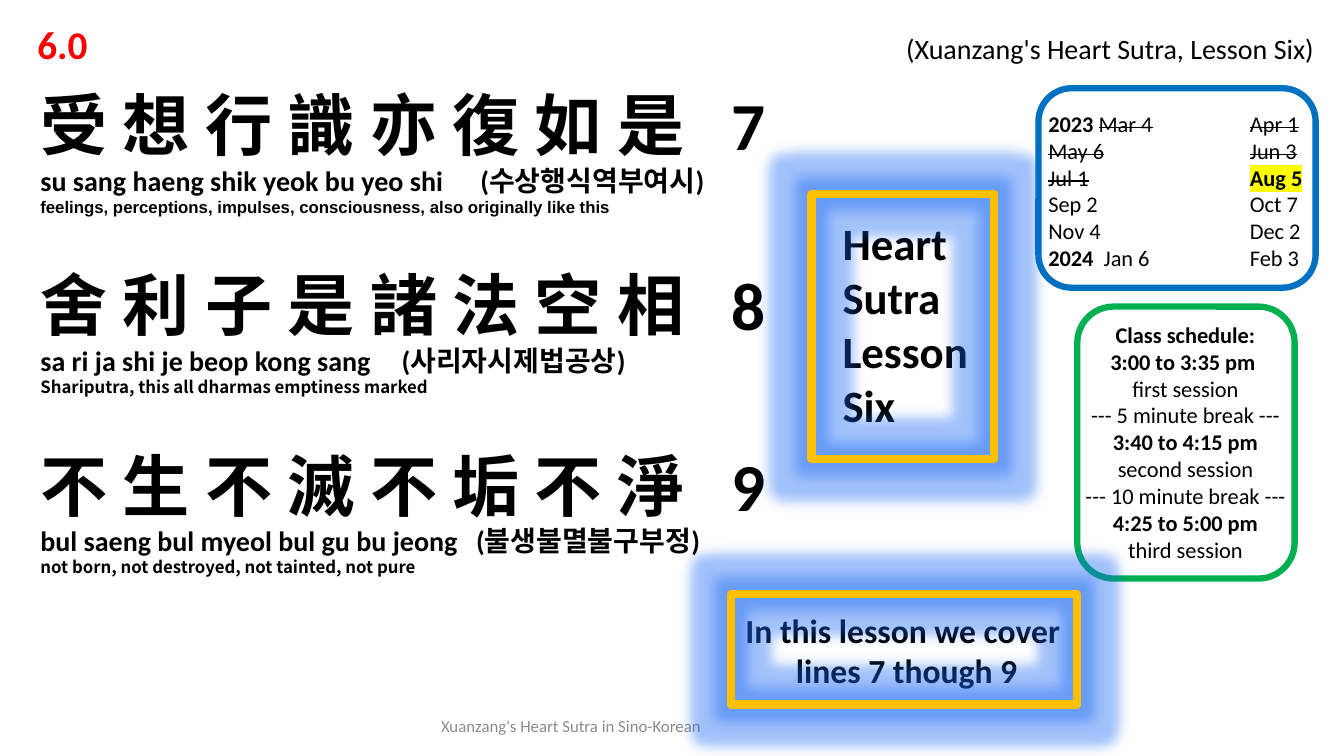
from lxml import etree
from pptx import Presentation
from pptx.dml.color import RGBColor
from pptx.enum.shapes import MSO_SHAPE
from pptx.enum.text import MSO_ANCHOR, MSO_AUTO_SIZE, PP_ALIGN
from pptx.oxml.ns import qn
from pptx.util import Pt

RECTANGLE = MSO_SHAPE.RECTANGLE
ROUNDED = MSO_SHAPE.ROUNDED_RECTANGLE
TOP, MIDDLE = MSO_ANCHOR.TOP, MSO_ANCHOR.MIDDLE
LEFT, CENTER = PP_ALIGN.LEFT, PP_ALIGN.CENTER
NO_AUTOFIT = MSO_AUTO_SIZE.NONE
TITLE_ONLY = 5
EMU_PER_PX = 9525
COLORS = {
    "black": "000000", "red": "FF0000", "gray": "8C8C8C", "blue": "0070C0",
    "green": "00B050", "gold": "FFC000", "yellow": "FFFF00", "glow": "1465F4",
}
LATIN, CJK, SANS = "Calibri", "Noto Sans CJK KR", "Arial"
BOLD = {"bold": True}

VERSES = [
    ("受 想 行 識 亦 復 如 是", "7", "su sang haeng shik yeok bu yeo shi", "(수상행식역부여시)", 419,
     "feelings, perceptions, impulses, consciousness, also originally like this", SANS),
    ("舍 利 子 是 諸 法 空 相", "8", "sa ri ja shi je beop kong sang", "(사리자시제법공상)", 344,
     "Shariputra, this all dharmas emptiness marked", CJK),
    ("不 生 不 滅 不 垢 不 淨", "9", "bul saeng bul myeol bul gu bu jeong", "(불생불멸불구부정)", 415,
     "not born, not destroyed, not tainted, not pure", CJK),
]
STRUCK = {"strike": True}
DATES = [
    [("2023 ", BOLD), ("Mar 4", STRUCK), ("\t", {}), ("Apr 1", STRUCK)],
    [("May 6", STRUCK), ("\t", {}), ("Jun 3", STRUCK)],
    [("Jul 1", STRUCK), ("\t", {}), ("Aug 5", {"bold": True, "highlight": "yellow"})],
    [("Sep 2\tOct 7", {})],
    [("Nov 4\tDec 2", {})],
    [("2024", BOLD), ("  Jan 6\tFeb 3", {})],
]
SESSIONS = [
    ("Class schedule:", BOLD),
    ("3:00 to 3:35 pm ", BOLD),
    ("first session", {}),
    ("--- 5 minute break ---", {}),
    ("3:40 to 4:15 pm", BOLD),
    ("second session", {}),
    ("--- 10 minute break ---", {}),
    ("4:25 to 5:00 pm", BOLD),
    ("third session", {}),
]


class SlideBuilder:
    def __init__(self, presentation):
        self.slide = presentation.slides.add_slide(presentation.slide_layouts[TITLE_ONLY])

    def place(self, shape, box):
        for name, value in zip(("left", "top", "width", "height"), box):
            setattr(shape, name, value * EMU_PER_PX)

    def title(self, box, paragraphs):
        shape = self.slide.shapes.title
        self.place(shape, box)
        self.fill_text(shape.text_frame, paragraphs, TOP)

    def text(self, box, paragraphs, anchor=TOP):
        shape = self.slide.shapes.add_textbox(*(value * EMU_PER_PX for value in box))
        self.fill_text(shape.text_frame, paragraphs, anchor)

    def fill_text(self, frame, paragraphs, anchor):
        frame.word_wrap = True
        frame.auto_size = NO_AUTOFIT
        frame.vertical_anchor = anchor
        for index, (runs, layout, tab) in enumerate(paragraphs):
            paragraph = frame.add_paragraph() if index else frame.paragraphs[0]
            for name, value in layout.items():
                setattr(paragraph, name, value)
            if tab:
                self.tab_stop(paragraph, *tab)
            for text, style in runs:
                self.run(paragraph, text, style)

    def tab_stop(self, paragraph, position, alignment):
        properties = paragraph._p.get_or_add_pPr()
        stops = etree.SubElement(properties, qn("a:tabLst"))
        etree.SubElement(stops, qn("a:tab"), pos=str(position * EMU_PER_PX), algn=alignment)

    def run(self, paragraph, text, style):
        run = paragraph.add_run()
        run.text = text
        font_values = {
            "name": style.get("font", LATIN),
            "size": Pt(style.get("size", 16)),
            "bold": style.get("bold", False),
        }
        for name, value in font_values.items():
            setattr(run.font, name, value)
        run.font.color.rgb = RGBColor.from_string(COLORS[style.get("color", "black")])
        properties = run.font._element
        latin = properties.find(qn("a:latin"))
        latin.addnext(etree.Element(qn("a:ea"), typeface=CJK))
        if style.get("strike"):
            properties.set("strike", "sngStrike")
        if "highlight" in style:
            highlight = etree.Element(qn("a:highlight"))
            etree.SubElement(highlight, qn("a:srgbClr"), val=COLORS[style["highlight"]])
            latin.addprevious(highlight)

    def frame(self, kind, box, color, width, glow=None):
        shape = self.slide.shapes.add_shape(kind, *(value * EMU_PER_PX for value in box))
        shape.shadow.inherit = False
        shape.fill.background()
        shape.line.color.rgb = RGBColor.from_string(COLORS[color])
        shape.line.width = Pt(width)
        if glow:
            effects = shape._element.spPr.find(qn("a:effectLst"))
            halo = etree.SubElement(effects, qn("a:glow"), rad=str(Pt(glow)))
            tint = etree.SubElement(halo, qn("a:srgbClr"), val=COLORS["glow"])
            etree.SubElement(tint, qn("a:alpha"), val="40000")


def verse_paragraphs():
    paragraphs = []
    for index, (hanzi, number, reading, hangul, hangul_tab, meaning, font) in enumerate(VERSES):
        lines = [
            (f"{hanzi}\t{number}", 48, 65, LATIN, (658, "l")),
            (f"{reading}\t{hangul}", 20, 23.4, LATIN, (hangul_tab, "l")),
            (meaning, 12, 14.3, font, None),
        ]
        for text, size, height, name, tab in lines:
            layout = {"line_spacing": Pt(height)}
            if index and size == 48:
                layout["space_before"] = Pt(26)
            paragraphs.append(([(text, {"size": size, "font": name, "bold": True})], layout, tab))
    return paragraphs


def centered(lines):
    return [([line], {"alignment": CENTER}, None) for line in lines]


def main():
    presentation = Presentation()
    presentation.slide_width = 1280 * EMU_PER_PX
    presentation.slide_height = 720 * EMU_PER_PX
    builder = SlideBuilder(presentation)

    heading = [
        ("6.0", {"size": 28, "bold": True, "color": "red"}),
        ("\t(Xuanzang's Heart Sutra, Lesson Six)", {"size": 20}),
    ]
    builder.title((26, 11, 1260, 56), [(heading, {"alignment": LEFT, "line_spacing": 1.07}, (1216, "r"))])
    builder.text((29, 65, 944, 552), verse_paragraphs())
    footer = ("Xuanzang's Heart Sutra in Sino-Korean", {"size": 12, "color": "gray"})
    builder.text((328, 672, 432, 38), centered([footer]), MIDDLE)

    builder.text((989, 100, 262, 164), [(runs, {}, (192, "l")) for runs in DATES])
    builder.frame(ROUNDED, (989, 84, 264, 190), "blue", 4.5)
    builder.text((1004, 301, 250, 242), centered(SESSIONS))
    builder.frame(ROUNDED, (1026, 292, 207, 259), "green", 4.5)

    lesson_style = {"size": 32, "bold": True}
    lesson = [([(word, lesson_style)], {}, None) for word in ("Heart", "Sutra", "Lesson", "Six")]
    builder.text((793, 201, 154, 217), lesson)
    builder.frame(RECTANGLE, (773, 185, 174, 252), "gold", 6, glow=18)
    cover_style = {"size": 24, "bold": True}
    cover = [(line, cover_style) for line in ("In this lesson we cover ", "lines 7 though 9")]
    builder.text((657, 576, 413, 87), centered(cover))
    builder.frame(RECTANGLE, (696, 566, 330, 105), "gold", 6, glow=18)

    presentation.save("out.pptx")


if __name__ == "__main__":
    main()
